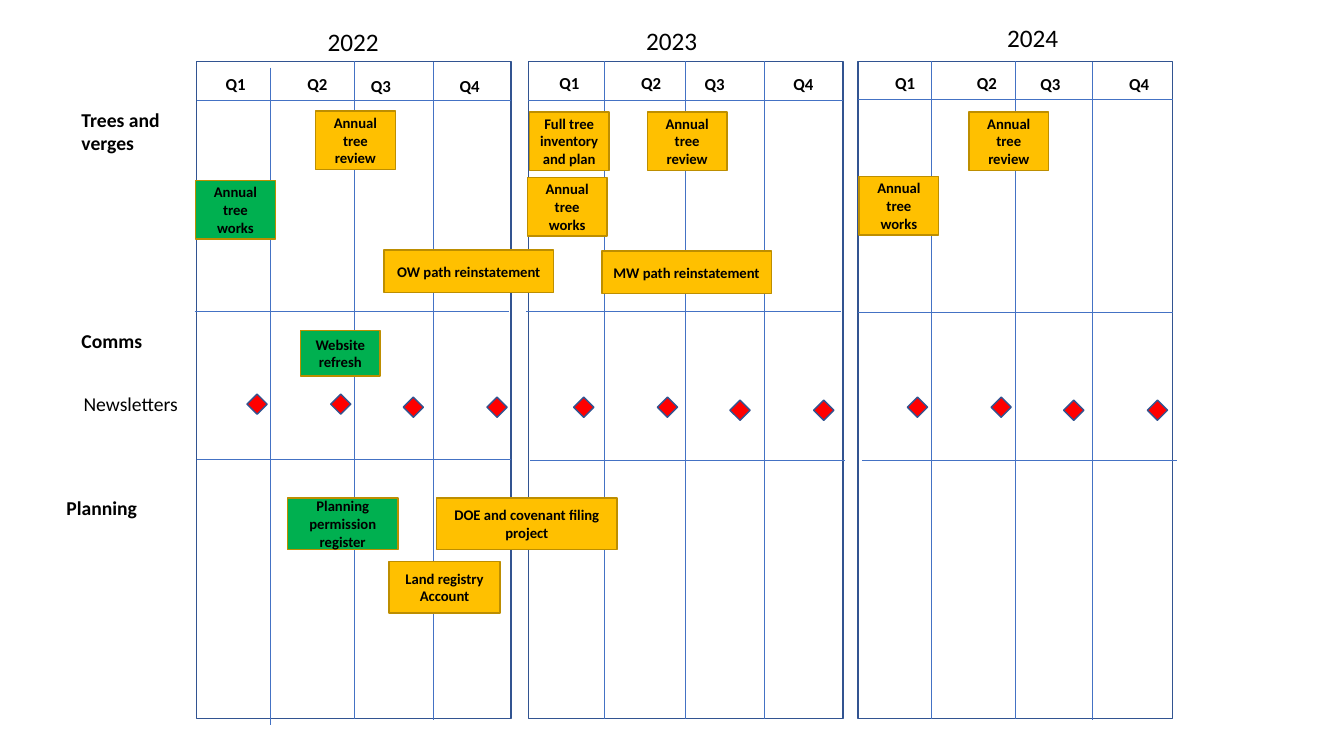
from lxml.etree import SubElement
from pptx import Presentation
from pptx.dml.color import RGBColor
from pptx.enum.shapes import MSO_CONNECTOR, MSO_SHAPE
from pptx.enum.text import MSO_ANCHOR, MSO_AUTO_SIZE, PP_ALIGN
from pptx.oxml.ns import qn
from pptx.util import Inches, Pt

HUES = {"text": "000000", "frame": "325491", "grid": "4472C4", "edge": "BD8E00",
        "done": "00B050", "plan": "FFC000", "news": "FF0000"}

YEARS = [
    {"name": "2022", "left": 1.95, "label": (3.15, 0.21), "cols": [(2.68, 0.67), (3.52, 0.61), (4.3, 0.62)],
     "rows": [(1.95, 1), (1.93, 3.09), (1.95, 4.56)], "head": (2.14, 0.68, 0.02), "news": (2.45, 3.91)},
    {"name": "2023", "left": 5.24, "label": (6.31, 0.2), "cols": [(5.99, 0.61), (6.8, 0.61), (7.58, 0.61)],
     "rows": [(5.24, 1), (5.22, 3.09), (5.26, 4.57)], "head": (5.45, 0.67, 0.01), "news": (5.69, 3.94)},
    {"name": "2024", "left": 8.51, "label": (9.89, 0.17), "cols": [(9.24, 0.61), (10.05, 0.61), (10.83, 0.62)],
     "rows": [(8.51, 0.99), (8.51, 3.1), (8.55, 4.57)], "head": (8.78, 0.67, 0.01), "news": (9, 3.94)},
]
HEADS = [0, 0.81, 1.44, 2.32]
NEWS = [0, 0.83, 1.55, 2.38]
TOP, WIDE, TALL = 0.61, 3.12, 6.52

LABELS = [("Trees and verges", 0.71, 1.02, 1.48, 0.57, True, True),
          ("Comms", 0.71, 3.21, 1.48, 0.34, True, True),
          ("Newsletters", 0.73, 3.84, 1.15, 0.34, False, False),
          ("Planning", 0.56, 4.87, 1.48, 0.34, True, True)]

SIZES = {"small": (0.79, 0.58), "short": (0.79, 0.45), "path": (1.68, 0.42),
         "mid": (1.1, 0.51), "long": (1.79, 0.51)}
TASKS = [("Website refresh", 2.98, 3.28, "short", "done"),
         ("Annual tree review", 3.13, 1.1, "small", "plan"),
         ("Annual tree review", 6.42, 1.11, "small", "plan"),
         ("Annual tree review", 9.61, 1.11, "small", "plan"),
         ("Annual tree works", 1.94, 1.79, "small", "done"),
         ("Annual tree works", 5.23, 1.76, "small", "plan"),
         ("Annual tree works", 8.52, 1.75, "small", "plan"),
         ("OW path reinstatement", 3.81, 2.48, "path", "plan"),
         ("MW path reinstatement", 5.97, 2.49, "path", "plan"),
         ("Full tree inventory and plan", 5.25, 1.11, "small", "plan"),
         ("Planning permission register", 2.85, 4.94, "mid", "done"),
         ("Land registry Account", 3.86, 5.57, "mid", "plan"),
         ("DOE and covenant filing project", 4.33, 4.94, "long", "plan")]


class Board:
    """Holds the style and the slide being drawn."""

    def __init__(self, slide, face="Calibri"):
        self.slide, self.face = slide, face

    def hue(self, name):
        return RGBColor.from_string(HUES[name])

    def letter(self, shape, text, size, bold):
        part = shape.text_frame.paragraphs[0]
        part.text = text
        part.font.name, part.font.size, part.font.bold = self.face, Pt(size), bold
        part.font.color.rgb = self.hue("text")
        return part

    def text(self, text, x, y, w, h, size, bold=False, wrap=False):
        box = self.slide.shapes.add_textbox(*map(Inches, (x, y, w, h)))
        box.text_frame.word_wrap = wrap
        box.text_frame.auto_size = MSO_AUTO_SIZE.SHAPE_TO_FIT_TEXT
        self.letter(box, text, size, bold)

    def shape(self, kind, x, y, w, h, line, fill=None):
        item = self.slide.shapes.add_shape(kind, *map(Inches, (x, y, w, h)))
        item.shadow.inherit = False
        item.line.color.rgb, item.line.width = self.hue(line), Pt(1)
        if fill:
            item.fill.solid()
            item.fill.fore_color.rgb = self.hue(fill)
        else:
            item.fill.background()
        return item

    def task(self, text, x, y, size, fill):
        item = self.shape(MSO_SHAPE.RECTANGLE, x, y, *SIZES[size], "edge", fill)
        item.text_frame.word_wrap = True
        item.text_frame.vertical_anchor = MSO_ANCHOR.MIDDLE
        self.letter(item, text, 10.5, True).alignment = PP_ALIGN.CENTER

    def line(self, x, y, w, h):
        rule = self.slide.shapes.add_connector(
            MSO_CONNECTOR.STRAIGHT, *map(Inches, (x, y, x + w, y + h)))
        rule.line.color.rgb, rule.line.width = self.hue("grid"), Pt(0.5)
        SubElement(rule._element.spPr, qn("a:effectLst"))
        return rule

    def year(self, name, left, label, cols, rows, head, news):
        frame = self.shape(MSO_SHAPE.RECTANGLE, left, TOP, WIDE, TALL, "frame")
        self.text(name, *label, 0.71, 0.4, 18)
        rules = [self.line(x, y, 0, TALL) for x, y in cols]
        rules[1].begin_connect(frame, 0)
        rules[1].end_connect(frame, 2)
        for x, y in rows:
            self.line(x, y, WIDE, 0)
        x, y, drop = head
        for i, step in enumerate(HEADS):
            self.text(f"Q{i + 1}", x + step, y + i // 2 * drop, 0.4, 0.3, 12, True)
        x, y = news
        for i, step in enumerate(NEWS):
            self.shape(MSO_SHAPE.DIAMOND, x + step, y + i // 2 * 0.03, 0.2, 0.2, "frame", "news")


def main():
    deck = Presentation()
    deck.slide_width, deck.slide_height = Inches(13.33), Inches(7.5)
    board = Board(deck.slides.add_slide(deck.slide_layouts[6]))
    for year in YEARS:
        board.year(**year)
    for text, x, y, w, h, bold, wrap in LABELS:
        board.text(text, x, y, w, h, 14, bold, wrap)
    for task in TASKS:
        board.task(*task)
    deck.save("out.pptx")


if __name__ == "__main__":
    main()
